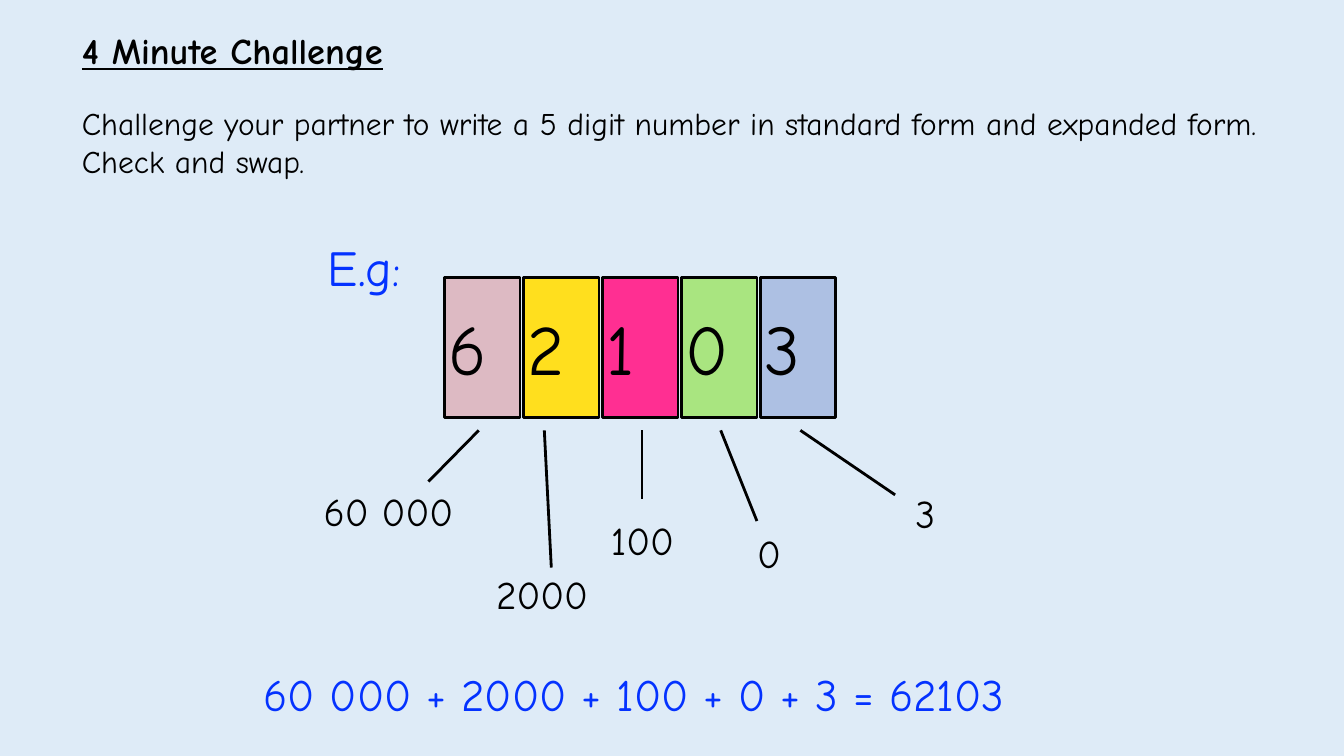
from dataclasses import dataclass

from lxml import etree
from pptx import Presentation
from pptx import util as u
from pptx.dml.color import RGBColor
from pptx.enum import shapes, text
from pptx.oxml import ns


@dataclass(frozen=True)
class Theme:
    font: str = "Comic Neue"
    page: str = "DEEBF7"
    ink: str = "000000"
    accent: str = "0432FF"
    heading: float = 26
    instruction: float = 22.5
    digit: float = 50.6
    value: float = 28
    example: float = 36
    total: float = 32
    line: float = 2


@dataclass(frozen=True)
class Box:
    left: float
    top: float
    width: float
    height: float

    def inside(self, left, top, width, height):
        return Box(self.left + left, self.top + top, width, height)

    def lengths(self):
        return [u.Pt(side) for side in (self.left, self.top, self.width, self.height)]


@dataclass(frozen=True)
class Place:
    digit: str
    fill: str
    value: str
    start: float
    end: tuple
    label: tuple


THEME = Theme()
FRAME = {
    "margin_left": u.Pt(3),
    "margin_right": u.Pt(3),
    "margin_top": u.Pt(3),
    "margin_bottom": u.Pt(3),
    "vertical_anchor": text.MSO_ANCHOR.MIDDLE,
    "auto_size": text.MSO_AUTO_SIZE.NONE,
}
PARAGRAPH = {
    "alignment": text.PP_ALIGN.LEFT,
    "line_spacing": 1.0,
    "space_before": u.Pt(0),
    "space_after": u.Pt(0),
}
PLACES = [
    Place("6", "DDBAC3", "60 000", 24.5, (-11.5, 146), (-89.3, 147, 100.8)),
    Place("2", "FFDF1E", "2000", 71.3, (76.3, 207.4), (33.9, 206.6, 74.9)),
    Place("1", "FF2F92", "100", 141.1, (141.1, 158.4), (115.9, 167.8, 53.3)),
    Place("0", "A9E580", "0", 197.3, (223.2, 174.2), (220.3, 177.1, 23)),
    Place("3", "ADC0E3", "3", 254.2, (321.9, 155.5), (333.4, 148.3, 23)),
]


def apply(target, values):
    for name, value in values.items():
        setattr(target, name, value)


def write(shape, spans, color, wrap=True, **font):
    frame = shape.text_frame
    apply(frame, {**FRAME, "word_wrap": wrap})
    para = frame.paragraphs[0]
    apply(para, PARAGRAPH)
    for words, size in spans:
        span = para.add_run()
        span.text = words
        apply(span.font, {"name": THEME.font, "size": u.Pt(size), **font})
        span.font.color.rgb = RGBColor.from_string(color)
    return para


def add_label(page, box, spans, color, wrap=False):
    label = page.shapes.add_textbox(*box.lengths())
    write(label, spans, color, wrap)


def place_holder(holder, box):
    apply(holder, dict(zip(("left", "top", "width", "height"), box.lengths())))


def add_instructions(page, box):
    title, body = page.shapes.title, page.placeholders[1]
    place_holder(title, box.inside(0, 0, box.width, 37))
    write(title, [("4 Minute Challenge", THEME.heading)], THEME.ink,
          bold=True, underline=True)
    place_holder(body, box.inside(0, 54, box.width, 60))
    para = write(body, [("Challenge your partner to write a 5 digit number in standard form "
                         "and expanded form. Check and swap.", THEME.instruction)], THEME.ink)
    properties = para._p.get_or_add_pPr()
    properties.set("marL", "0")
    properties.set("indent", "0")
    etree.SubElement(properties, ns.qn("a:buNone"))


def add_card(page, box, place):
    card = page.shapes.add_shape(shapes.MSO_SHAPE.RECTANGLE, *box.lengths())
    card.shadow.inherit = False
    card.fill.solid()
    card.fill.fore_color.rgb = RGBColor.from_string(place.fill)
    card.line.color.rgb = RGBColor.from_string(THEME.ink)
    card.line.width = u.Pt(THEME.line)
    write(card, [(place.digit, THEME.digit)], THEME.ink)


def add_pointer(page, start, end):
    pointer = page.shapes.add_connector(
        shapes.MSO_CONNECTOR.STRAIGHT, *[u.Pt(side) for side in (*start, *end)])
    pointer.line.color.rgb = RGBColor.from_string(THEME.ink)
    pointer.line.width = u.Pt(THEME.line)
    etree.SubElement(pointer._element.spPr, ns.qn("a:effectLst"))


def add_place_values(page, box):
    pitch, width = box.width / len(PLACES), 54
    add_label(page, box.inside(-86.4, -32.4, 66.2, 49),
              [("E.g", THEME.example), (":", THEME.total)], THEME.accent)
    for index, place in enumerate(PLACES):
        add_card(page, box.inside(index * pitch, 0, width, box.height), place)
        left, top, label_width = place.label
        add_pointer(page, (box.left + place.start, box.top + box.height + 9.4),
                    (box.left + place.end[0], box.top + place.end[1]))
        add_label(page, box.inside(left, top, label_width, 39.6),
                  [(place.value, THEME.value)], THEME.ink)


def add_total(page, box):
    add_label(page, box, [("60 000 + 2000 + 100 + 0 + 3 = 62103", THEME.total)],
              THEME.accent, wrap=True)


def main():
    deck = Presentation()
    apply(deck, {"slide_width": u.Pt(960), "slide_height": u.Pt(540)})
    page = deck.slides.add_slide(deck.slide_layouts[1])
    page.background.fill.solid()
    page.background.fill.fore_color.rgb = RGBColor.from_string(THEME.page)
    add_instructions(page, Box(55.4, 17.3, 869, 114.5))
    add_place_values(page, Box(317.5, 198, 282, 100))
    add_total(page, Box(185, 473, 656.6, 44.6))
    deck.save("out.pptx")


if __name__ == "__main__":
    main()
